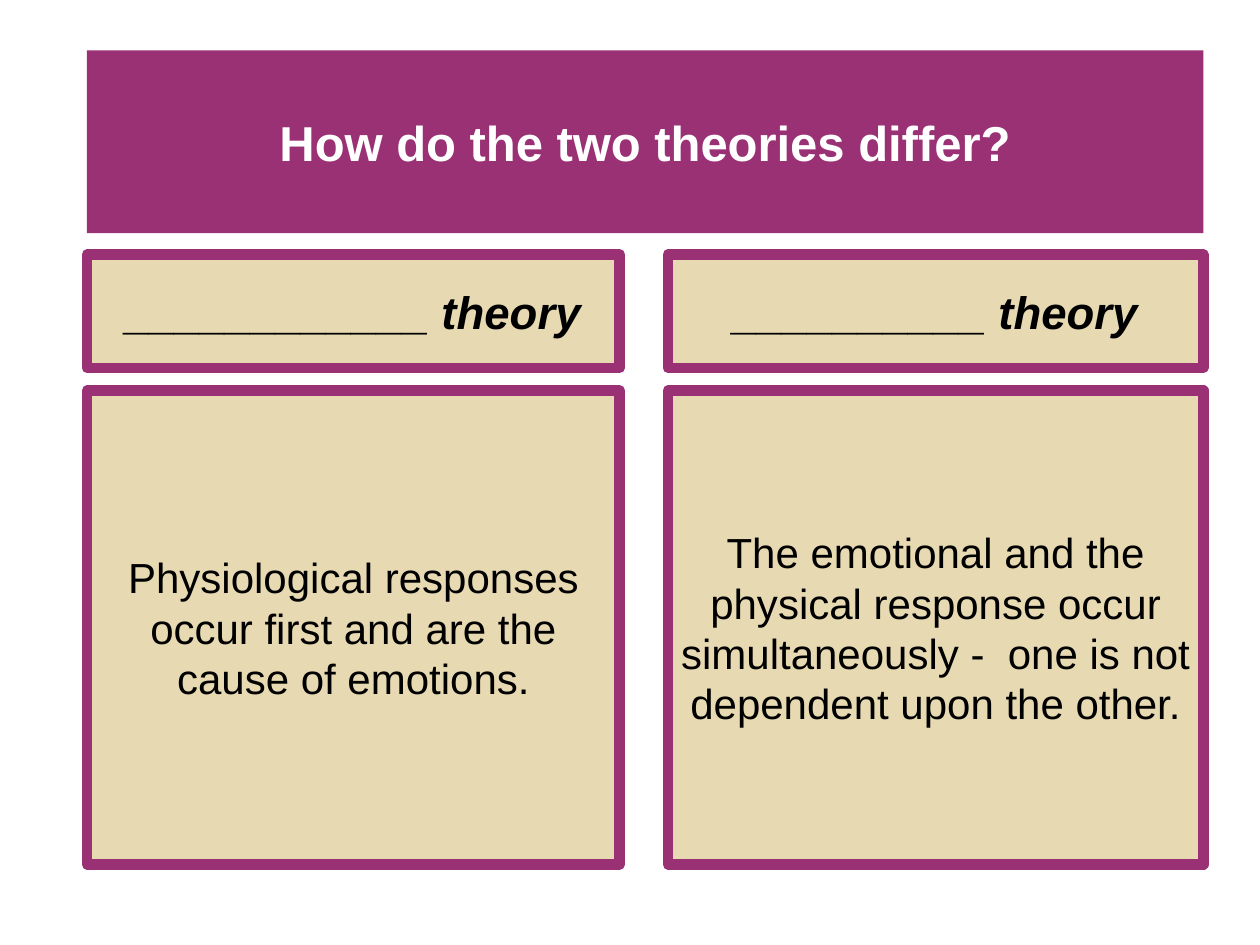
from dataclasses import dataclass

from pptx import Presentation
from pptx.dml.color import RGBColor
from pptx.enum.shapes import MSO_SHAPE as Preset
from pptx.enum.text import MSO_ANCHOR as Anchor, MSO_AUTO_SIZE as AutoSize, PP_ALIGN as Align
from pptx.util import Pt


@dataclass(frozen=True)
class Theme:
    plum: RGBColor = RGBColor(0x9B, 0x31, 0x75)
    sand: RGBColor = RGBColor(0xE7, 0xD9, 0xB1)
    black: RGBColor = RGBColor(0, 0, 0)
    white: RGBColor = RGBColor(0xFF, 0xFF, 0xFF)
    font: str = "Arial"
    title_size: int = 28
    heading_size: int = 26
    body_size: int = 24
    border: int = 6


@dataclass(frozen=True)
class Box:
    left: float
    top: float
    width: float
    height: float


THEME = Theme()
TITLE_BOX = Box(49.7, 28.8, 637.9, 104.4)
COLUMNS_TOP, COLUMNS_HEIGHT = 145.45, 348.5
HEADING_HEIGHT, ROW_GAP = 64.8, 13
COLUMNS = [
    (49.7, 304.5, "____________ theory",
     "Physiological responses occur first and are the cause of emotions."),
    (381.6, 306, "__________ theory",
     "The emotional and the physical response occur simultaneously -  "
     "one is not dependent upon the other."),
]


def write(shape, text, *, size, color=THEME.black, bold=False, italic=False):
    frame = shape.text_frame
    frame.word_wrap = True
    frame.auto_size = AutoSize.NONE
    frame.vertical_anchor = Anchor.MIDDLE
    frame.margin_left = frame.margin_right = Pt(7.2)
    frame.margin_top = frame.margin_bottom = Pt(3.6)
    paragraph = frame.paragraphs[0]
    paragraph.alignment = Align.CENTER
    run = paragraph.add_run()
    run.text = text
    run.font.name = THEME.font
    run.font.size = Pt(size)
    run.font.bold = bold
    run.font.italic = italic
    run.font.color.rgb = color


def fill_solid(shape, color):
    shape.fill.solid()
    shape.fill.fore_color.rgb = color


def place_title(slide, box, text):
    title = slide.shapes.title
    title.left, title.top = Pt(box.left), Pt(box.top)
    title.width, title.height = Pt(box.width), Pt(box.height)
    fill_solid(title, THEME.plum)
    write(title, text, size=THEME.title_size, color=THEME.white, bold=True)


def add_panel(slide, box, text, **text_format):
    panel = slide.shapes.add_shape(
        Preset.RECTANGLE, Pt(box.left), Pt(box.top), Pt(box.width), Pt(box.height))
    panel.shadow.inherit = False
    fill_solid(panel, THEME.sand)
    panel.line.color.rgb = THEME.plum
    panel.line.width = Pt(THEME.border)
    write(panel, text, **text_format)


def add_theory_column(slide, box, heading, description):
    """Stack a heading panel over a description panel that fills the rest of the box."""
    offset = HEADING_HEIGHT + ROW_GAP
    add_panel(slide, Box(box.left, box.top, box.width, HEADING_HEIGHT), heading,
              size=THEME.heading_size, bold=True, italic=True)
    add_panel(slide, Box(box.left, box.top + offset, box.width, box.height - offset),
              description, size=THEME.body_size)


def main():
    deck = Presentation()
    deck.slide_width, deck.slide_height = Pt(720), Pt(540)
    slide = deck.slides.add_slide(deck.slide_layouts.get_by_name("Title Only"))
    place_title(slide, TITLE_BOX, "How do the two theories differ?")
    for left, width, heading, description in COLUMNS:
        column = Box(left, COLUMNS_TOP, width, COLUMNS_HEIGHT)
        add_theory_column(slide, column, heading, description)
    deck.save("out.pptx")


if __name__ == "__main__":
    main()
